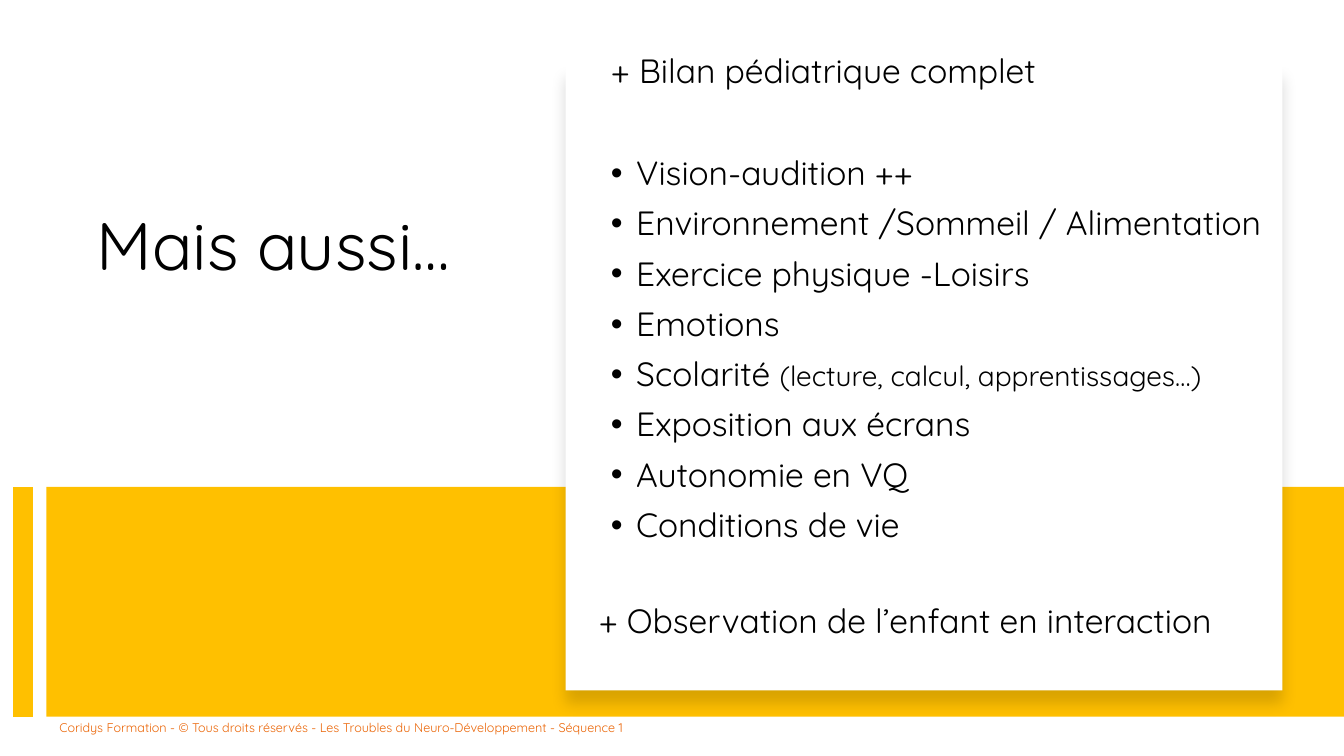
from dataclasses import dataclass

from lxml import etree
from pptx import Presentation
from pptx.dml.color import RGBColor
from pptx.enum.shapes import MSO_CONNECTOR, MSO_SHAPE
from pptx.enum.text import MSO_ANCHOR, MSO_AUTO_SIZE, PP_ALIGN
from pptx.oxml.ns import qn
from pptx.util import Inches, Pt

RECT = MSO_SHAPE.RECTANGLE
LINE = MSO_CONNECTOR.STRAIGHT
TOP = MSO_ANCHOR.TOP
LEFT = PP_ALIGN.LEFT
FIXED = MSO_AUTO_SIZE.NONE
GROW = MSO_AUTO_SIZE.SHAPE_TO_FIT_TEXT


@dataclass(frozen=True)
class Theme:
    """Hold the font, colours and type sizes."""
    font: str = "Quicksand"
    ink: str = "000000"
    paper: str = "FFFFFF"
    gold: str = "FFC000"
    rust: str = "EB6608"
    title: int = 48
    body: int = 24
    small: int = 20
    foot: int = 9


THEME = Theme()

TOPICS = [
    ("Vision-audition ++",),
    ("Environnement /Sommeil / Alimentation",),
    ("Exercice physique -Loisirs",),
    ("Emotions",),
    ("Scolarité ", "(lecture, calcul, apprentissages…)"),
    ("Exposition aux écrans",),
    ("Autonomie en VQ",),
    ("Conditions de vie",),
]


def place(shape, left, top, width, height):
    """Move and size a shape in inches."""
    shape.left, shape.top = Inches(left), Inches(top)
    shape.width, shape.height = Inches(width), Inches(height)


def mark(para, bullet):
    """Give a paragraph a hanging bullet or none."""
    props = para._p.get_or_add_pPr()
    indent = Inches(0.25) if bullet else 0
    props.set("marL", str(indent))
    props.set("indent", str(-indent))
    if bullet:
        font = etree.SubElement(props, qn("a:buFont"))
        font.set("typeface", "Arial")
        etree.SubElement(props, qn("a:buChar")).set("char", "•")
    else:
        etree.SubElement(props, qn("a:buNone"))


def write(para, text, size=THEME.body, color=THEME.ink, bullet=None,
          before=0, line=1.0):
    """Fill a paragraph with text, adding its format."""
    if bullet is not None:
        mark(para, bullet)
    para.alignment = LEFT
    para.space_before = Pt(before)
    para.line_spacing = line
    run = para.add_run()
    run.text = text
    run.font.name = THEME.font
    run.font.size = Pt(size)
    run.font.color.rgb = RGBColor.from_string(color)


def setup(frame, fit):
    """Set wrapping, anchor and fit of a text frame."""
    frame.word_wrap = True
    frame.vertical_anchor = TOP
    frame.auto_size = fit


def panel(slide, box, color):
    """Draw a plain filled rectangle."""
    shape = slide.shapes.add_shape(RECT, *map(Inches, box))
    shape.shadow.inherit = False
    shape.fill.solid()
    shape.fill.fore_color.rgb = RGBColor.from_string(color)
    shape.line.fill.background()
    return shape


def shade(shape):
    """Cast a soft shadow below a shape."""
    effects = shape._element.spPr.find(qn("a:effectLst"))
    outer = etree.SubElement(effects, qn("a:outerShdw"), blurRad=str(Pt(11)),
                             dist=str(Pt(10)), dir="5400000", algn="t",
                             rotWithShape="0")
    color = etree.SubElement(outer, qn("a:srgbClr"), val=THEME.ink)
    etree.SubElement(color, qn("a:alpha"), val="15000")


def stripe(slide, x, top, bottom):
    """Draw the thick upright line beside the band."""
    line = slide.shapes.add_connector(
        LINE, Inches(x), Inches(top), Inches(x), Inches(bottom))
    line.line.color.rgb = RGBColor.from_string(THEME.gold)
    line.line.width = Pt(14)
    etree.SubElement(line._element.spPr, qn("a:effectLst"))


def label(slide, box, text, **form):
    """Add a text box with one paragraph."""
    shape = slide.shapes.add_textbox(*map(Inches, box))
    setup(shape.text_frame, GROW)
    write(shape.text_frame.paragraphs[0], text, **form)


def head(slide):
    """Fill the title."""
    title = slide.shapes.title
    place(title, 0.86, 2.06, 4.15, 0.93)
    setup(title.text_frame, FIXED)
    write(title.text_frame.paragraphs[0], "Mais aussi…",
          size=THEME.title, line=0.9)


def topics(slide):
    """Fill the list and bring it above the card."""
    body = slide.placeholders[1]
    place(body, 5.96, 0.49, 7, 6.36)
    frame = body.text_frame
    setup(frame, FIXED)
    write(frame.paragraphs[0], "+ Bilan pédiatrique complet",
          bullet=False, line=0.9)
    for row, (text, *notes) in enumerate(TOPICS):
        para = frame.add_paragraph()
        before = 10 if row else 47
        write(para, text, bullet=True, before=before, line=0.9)
        for note in notes:
            write(para, note, size=THEME.small, before=before, line=0.9)
    slide.shapes._spTree.append(body._element)


def main():
    """Build and save the slide."""
    deck = Presentation()
    deck.slide_width, deck.slide_height = Inches(13.33), Inches(7.5)
    slide = deck.slides.add_slide(deck.slide_layouts[1])
    slide.background.fill.solid()
    slide.background.fill.fore_color.rgb = RGBColor.from_string(THEME.paper)
    head(slide)
    panel(slide, (0.46, 4.83, 12.87, 2.28), THEME.gold)
    stripe(slide, 0.23, 4.83, 7.11)
    shade(panel(slide, (5.61, 0.64, 7.11, 6.21), THEME.paper))
    topics(slide)
    label(slide, (0.49, 7.09, 12.07, 0.25),
          "Coridys Formation - © Tous droits réservés - "
          "Les Troubles du Neuro-Développement - Séquence 1",
          size=THEME.foot, color=THEME.rust)
    label(slide, (5.84, 5.9, 7.11, 0.5),
          "+ Observation de l’enfant en interaction")
    deck.save("out.pptx")


if __name__ == "__main__":
    main()
